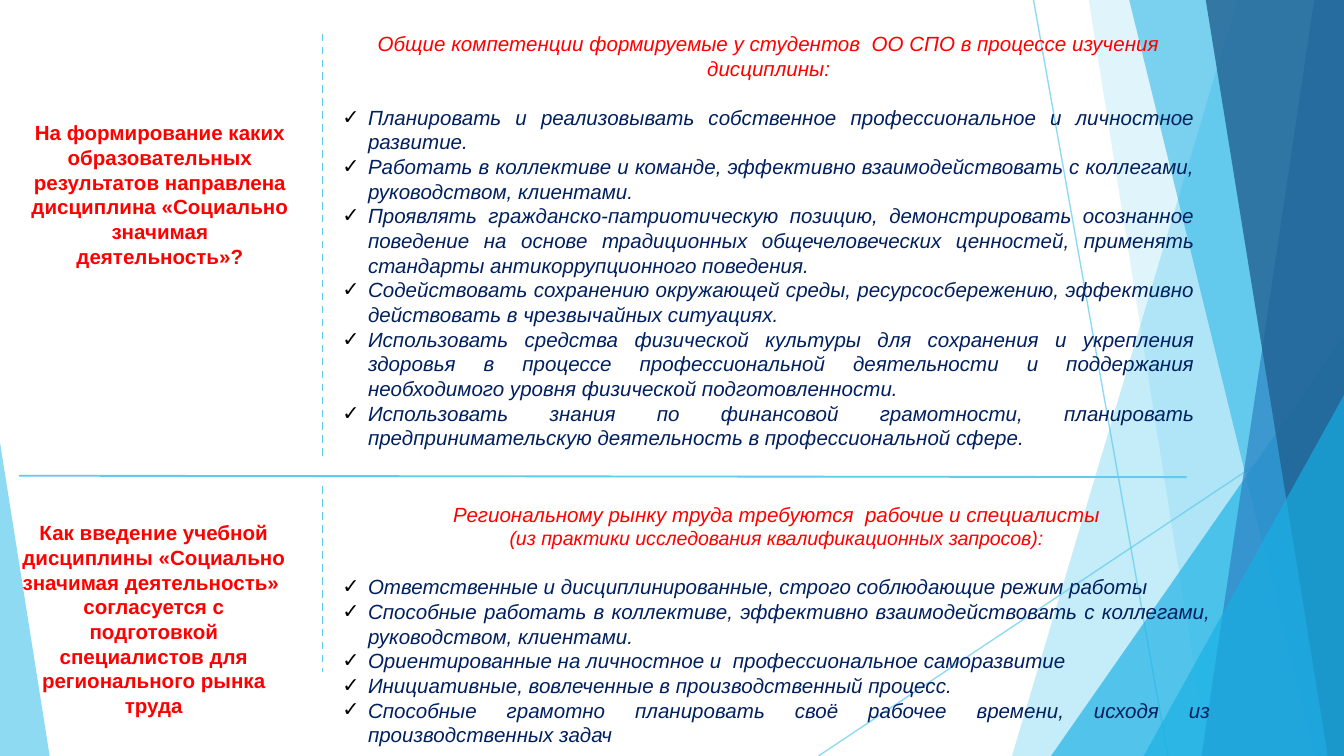
from dataclasses import dataclass

from lxml.etree import SubElement
from pptx import Presentation
from pptx.dml.color import RGBColor
from pptx.enum.dml import MSO_LINE
from pptx.enum.shapes import MSO_CONNECTOR, MSO_SHAPE
from pptx.enum.text import MSO_ANCHOR, PP_ALIGN
from pptx.oxml.ns import qn
from pptx.util import Inches, Pt


@dataclass(frozen=True)
class Theme:
    font: str = "Arial"
    size: float = 11
    small: float = 10.5
    red: str = "FF0000"
    navy: str = "002060"
    black: str = "000000"
    sky: str = "5FCBEF"
    cyan: str = "17B0E4"
    blue: str = "2E83C3"
    deep: str = "226292"


T = Theme()
W = 10
H = W * 9 / 16
TOP = -0.01
INDENT = 0.19


@dataclass(frozen=True)
class Band:
    """Facet from the top edge to the bottom edge, open to the right side."""
    top_x: float
    bottom_x: float
    color: str
    alpha: int


@dataclass(frozen=True)
class Corner:
    """Triangle on the bottom edge; apex is 0 for left, 1 for right."""
    left: float
    top: float
    width: float
    apex: int
    color: str
    alpha: int


@dataclass(frozen=True)
class Rule:
    start: tuple[float, float]
    end: tuple[float, float]
    width: float = 1
    dashed: bool = False
    alpha: int = 100


@dataclass(frozen=True)
class Box:
    left: float
    top: float
    width: float
    height: float


@dataclass(frozen=True)
class Topic:
    question_box: Box
    question: tuple[str, ...]
    answer_box: Box
    headings: tuple[tuple[str, float], ...]
    points: tuple[str, ...]


RAYS = (
    Rule((7.69, 0), (8.69, H), 0.75, alpha=70),
    Rule((W, 3.02), (6.09, H), 0.75, alpha=70),
)
FACETS = (
    Band(9.21, 7.53, T.sky, 36),
    Band(8.1, 8.99, T.sky, 20),
    Corner(7.82, 2.5, 2.18, 1, T.cyan, 66),
    Band(8.4, 9.78, T.cyan, 50),
    Band(9.78, 8.94, T.blue, 70),
    Band(8.97, 9.88, T.deep, 80),
    Corner(8.51, 2.94, 1.49, 1, T.cyan, 66),
    Corner(0, 3.29, 0.37, 0, T.sky, 70),
)
DIVIDERS = (
    Rule((0.14, 3.54), (8.83, 3.55)),
    Rule((2.4, 0.25), (2.4, 3.43), dashed=True),
    Rule((2.4, 3.62), (2.4, 5), dashed=True),
)
TOPICS = (
    Topic(
        Box(0.12, 0.97, 2.14, 0.95),
        ("На формирование каких образовательных",
         "результатов направлена дисциплина «Социально значимая деятельность»?"),
        Box(2.45, 0.1, 6.54, 3.38),
        (("Общие компетенции формируемые у студентов  ОО СПО в процессе изучения дисциплины:", T.size),),
        ("Планировать и реализовывать собственное профессиональное и личностное развитие.",
         "Работать в коллективе и команде, эффективно взаимодействовать с коллегами, "
         "руководством, клиентами.",
         "Проявлять гражданско-патриотическую позицию, демонстрировать осознанное поведение "
         "на основе традиционных общечеловеческих ценностей, применять стандарты "
         "антикоррупционного поведения.",
         "Содействовать сохранению окружающей среды, ресурсосбережению, эффективно "
         "действовать в чрезвычайных ситуациях.",
         "Использовать средства физической культуры для сохранения и укрепления здоровья "
         "в процессе профессиональной деятельности и поддержания необходимого уровня "
         "физической подготовленности.",
         "Использовать знания по финансовой грамотности, планировать предпринимательскую "
         "деятельность в профессиональной сфере."),
    ),
    Topic(
        Box(0.03, 3.99, 2.23, 1.23),
        ("Как введение учебной дисциплины «Социально значимая деятельность»  согласуется "
         "с подготовкой специалистов для регионального рынка труда",),
        Box(2.45, 3.67, 6.66, 1.95),
        (("Региональному рынку труда требуются  рабочие и специалисты", T.size),
         ("(из практики исследования квалификационных запросов):", T.small)),
        ("Ответственные и дисциплинированные, строго соблюдающие режим работы",
         "Способные работать в коллективе, эффективно взаимодействовать с коллегами, "
         "руководством, клиентами.",
         "Ориентированные на личностное и  профессиональное саморазвитие",
         "Инициативные, вовлеченные в производственный процесс.",
         "Способные грамотно планировать своё рабочее времени, исходя из производственных задач"),
    ),
)


def set_alpha(sp, alpha: int) -> None:
    color = next(sp._element.spPr.iter(qn("a:srgbClr")))
    SubElement(color, qn("a:alpha"), val=str(alpha * 1000))


def add_rule(s, rule: Rule) -> None:
    ends = [Inches(v) for v in (*rule.start, *rule.end)]
    sp = s.shapes.add_connector(MSO_CONNECTOR.STRAIGHT, *ends)
    sp.line.color.rgb = RGBColor.from_string(T.sky)
    sp.line.width = Pt(rule.width)
    if rule.dashed:
        sp.line.dash_style = MSO_LINE.DASH
    if rule.alpha < 100:
        set_alpha(sp, rule.alpha)
    SubElement(sp._element.spPr, qn("a:effectLst"))


def add_facet(s, facet: Band | Corner) -> None:
    if isinstance(facet, Band):
        corners = [(facet.top_x, TOP), (W, TOP), (W, H), (facet.bottom_x, H)]
        start, *rest = [(Inches(x), Inches(y)) for x, y in corners]
        builder = s.shapes.build_freeform(*start)
        builder.add_line_segments(rest, close=True)
        sp = builder.convert_to_shape()
    else:
        box = (facet.left, facet.top, facet.width, H - facet.top)
        sp = s.shapes.add_shape(MSO_SHAPE.ISOSCELES_TRIANGLE, *map(Inches, box))
        sp.adjustments[0] = facet.apex
    sp.shadow.inherit = False
    sp.line.fill.background()
    sp.fill.solid()
    sp.fill.fore_color.rgb = RGBColor.from_string(facet.color)
    set_alpha(sp, facet.alpha)


def add_text_box(s, box: Box):
    sp = s.shapes.add_textbox(*map(Inches, (box.left, box.top, box.width, box.height)))
    tf = sp.text_frame
    tf.word_wrap = True
    tf.vertical_anchor = MSO_ANCHOR.MIDDLE
    return tf


def add_paragraph(tf, text: str, color: str, size: float = T.size, bold: bool = False,
                  italic: bool = False, align: PP_ALIGN = PP_ALIGN.CENTER):
    p = tf.paragraphs[0] if not tf.paragraphs[0].runs else tf.add_paragraph()
    p.alignment = align
    r = p.add_run()
    r.text = text
    r.font.name, r.font.size = T.font, Pt(size)
    r.font.bold, r.font.italic = bold, italic
    r.font.color.rgb = RGBColor.from_string(color)
    return p


def add_check_mark(p) -> None:
    pPr = p._p.get_or_add_pPr()
    pPr.set("marL", str(Inches(INDENT)))
    pPr.set("indent", str(-Inches(INDENT)))
    SubElement(SubElement(pPr, qn("a:buClr")), qn("a:srgbClr"), val=T.black)
    SubElement(pPr, qn("a:buFont"), typeface=T.font)
    SubElement(pPr, qn("a:buChar"), char="✓")


def add_topic(s, topic: Topic) -> None:
    tf = add_text_box(s, topic.question_box)
    for text in topic.question:
        add_paragraph(tf, text, T.red, bold=True)

    tf = add_text_box(s, topic.answer_box)
    for text, size in topic.headings:
        add_paragraph(tf, text, T.red, size, italic=True)
    for i, text in enumerate(topic.points):
        p = add_paragraph(tf, text, T.navy, italic=True, align=PP_ALIGN.JUSTIFY)
        if i == 0:
            p.space_before = Pt(13)
        add_check_mark(p)


def main() -> None:
    prs = Presentation()
    prs.slide_width, prs.slide_height = Inches(W), Inches(H)
    s = prs.slides.add_slide(prs.slide_layouts[6])
    for ray in RAYS:
        add_rule(s, ray)
    for facet in FACETS:
        add_facet(s, facet)
    for divider in DIVIDERS:
        add_rule(s, divider)
    for topic in TOPICS:
        add_topic(s, topic)
    prs.save("out.pptx")


if __name__ == "__main__":
    main()
